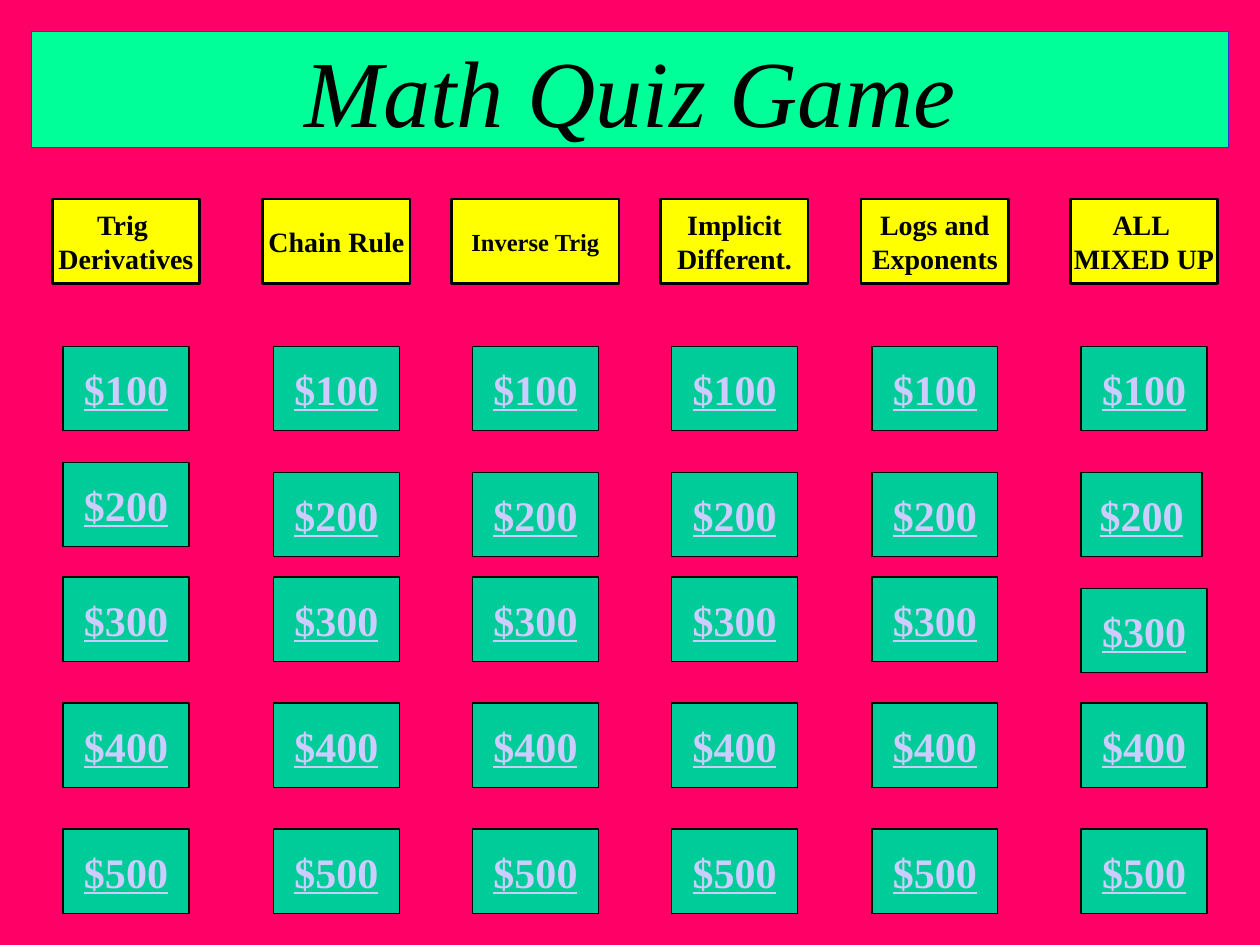
import pptx
import pptx.util
import pptx.dml.color
import pptx.enum.shapes
import pptx.enum.text

Inches = pptx.util.Inches
RGBColor = pptx.dml.color.RGBColor

PINK = RGBColor(0xFF, 0x00, 0x66)
MINT = RGBColor(0x00, 0xFF, 0x99)
BLUE = RGBColor(0x33, 0x33, 0xCC)
YELLOW = RGBColor(0xFF, 0xFF, 0x00)
GREEN = RGBColor(0x00, 0xCC, 0x99)
LAVENDER = RGBColor(0xCC, 0xCC, 0xFF)
BLACK = RGBColor(0x00, 0x00, 0x00)

FONT_NAME = "Times New Roman"
CARD_HEIGHT = 0.67
PRIZE_WIDTH = 1

# Category title, centre of its column, header width, font size
CATEGORIES = [
    ("Trig \nDerivatives", 1, 1.17, 16),
    ("Chain Rule", 2.67, 1.17, 16),
    ("Inverse Trig", 4.25, 1.33, 14),
    ("Implicit\nDifferent.", 5.83, 1.17, 16),
    ("Logs and\nExponents", 7.42, 1.17, 16),
    ("ALL \nMIXED UP", 9.08, 1.17, 16),
]
PRIZE_TOPS = {"$100": 2.75, "$200": 3.75, "$300": 4.58, "$400": 5.58, "$500": 6.58}

# Cards that sit off the common grid, by column and prize
SPECIAL_TOPS = {(0, "$200"): 3.67, (5, "$300"): 4.67}
SPECIAL_WIDTHS = {(5, "$200"): 0.96}


def add_card(slide, box, text, size, fill, line=BLACK, line_width=0.75,
             color=BLACK, bold=True, italic=False, underline=False):
    """Draw a filled rectangle with centred text in box (left, top, width, height)."""
    shape = slide.shapes.add_shape(
        pptx.enum.shapes.MSO_SHAPE.RECTANGLE, *[Inches(length) for length in box])
    shape.shadow.inherit = False
    shape.fill.solid()
    shape.fill.fore_color.rgb = fill
    shape.line.color.rgb = line
    shape.line.width = pptx.util.Pt(line_width)

    text_frame = shape.text_frame
    text_frame.word_wrap = False
    text_frame.vertical_anchor = pptx.enum.text.MSO_ANCHOR.MIDDLE
    text_frame.text = text
    for paragraph in text_frame.paragraphs:
        paragraph.alignment = pptx.enum.text.PP_ALIGN.CENTER
        for run in paragraph.runs:
            run.font.name = FONT_NAME
            run.font.size = pptx.util.Pt(size)
            run.font.bold = bold
            run.font.italic = italic
            run.font.underline = underline
            run.font.color.rgb = color


def add_title(slide, box):
    add_card(slide, box, "Math Quiz Game", 54, MINT, line=BLUE, bold=False, italic=True)


def add_headers(slide, top):
    for title, center, width, size in CATEGORIES:
        box = (center - width / 2, top, width, CARD_HEIGHT)
        add_card(slide, box, title, size, YELLOW, line_width=1.5)


def add_prizes(slide, column, left):
    """Stack the prize cards of one category below its header."""
    for prize, row_top in PRIZE_TOPS.items():
        top = SPECIAL_TOPS.get((column, prize), row_top)
        width = SPECIAL_WIDTHS.get((column, prize), PRIZE_WIDTH)
        add_card(slide, (left, top, width, CARD_HEIGHT), prize, 24, GREEN,
                 color=LAVENDER, underline=True)


def main():
    presentation = pptx.Presentation()
    presentation.slide_width = Inches(10)
    presentation.slide_height = Inches(7.5)
    slide = presentation.slides.add_slide(presentation.slide_layouts[6])
    slide.background.fill.solid()
    slide.background.fill.fore_color.rgb = PINK

    # Title banner and category row
    add_title(slide, (0.25, 0.25, 9.5, 0.92))
    add_headers(slide, 1.58)

    # Prize board
    for column, (title, center, width, size) in enumerate(CATEGORIES):
        add_prizes(slide, column, center - PRIZE_WIDTH / 2)

    presentation.save("out.pptx")


if __name__ == "__main__":
    main()
